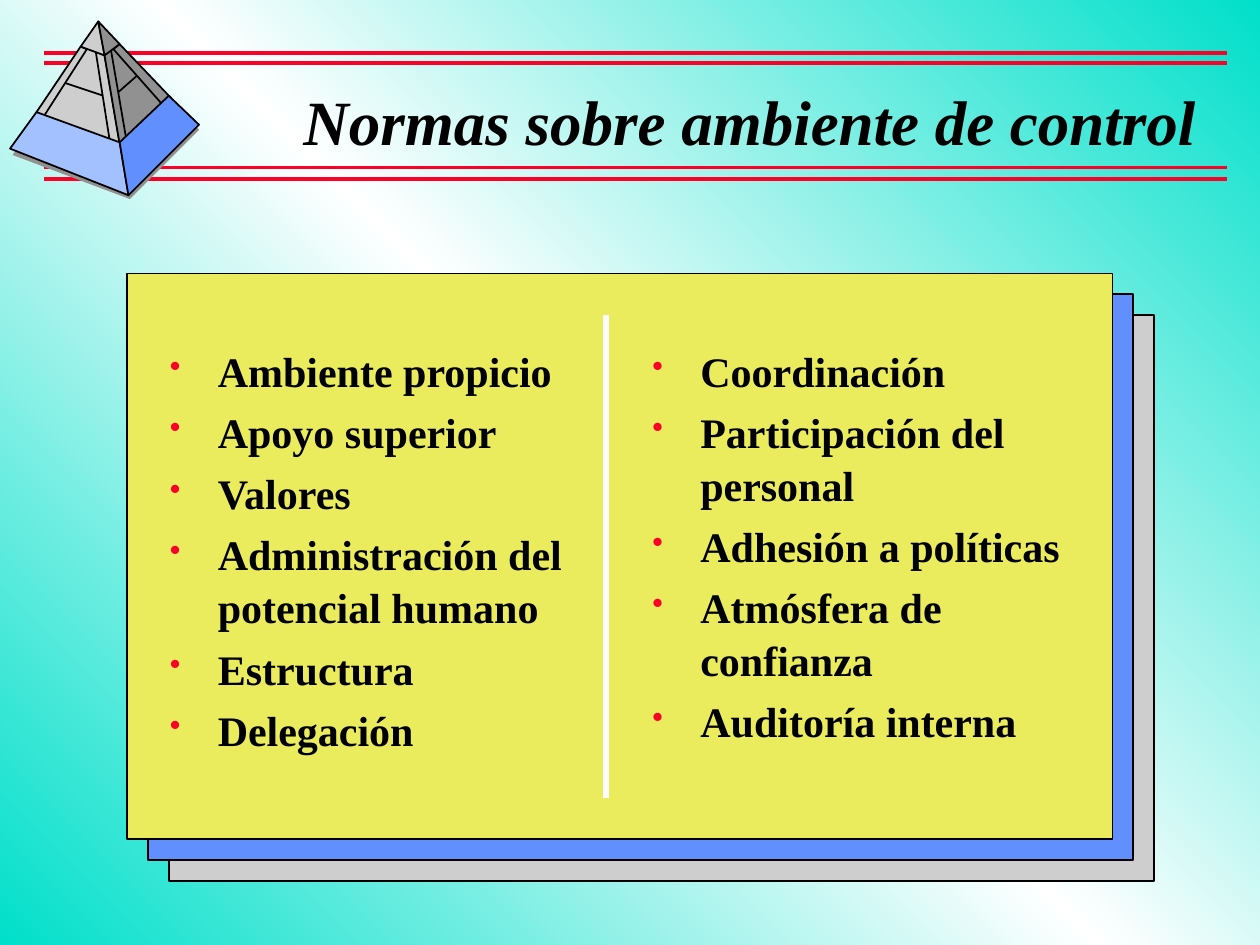
from lxml.etree import SubElement
from pptx import Presentation
from pptx.dml.color import RGBColor
from pptx.enum.shapes import MSO_CONNECTOR, MSO_SHAPE
from pptx.enum.text import MSO_ANCHOR, PP_ALIGN
from pptx.oxml import parse_xml
from pptx.oxml.ns import nsdecls, qn
from pptx.util import Inches, Pt

FONT = "Times New Roman"
RED, BLACK, WHITE, TEAL = "FC0128", "000000", "FFFFFF", "00DFCA"
LIGHT, DARK, BLUE, PALE_BLUE, YELLOW = "CECECE", "919191", "618FFD", "A2C1FE", "EAEC5E"

RULE_LEFT, RULE_RIGHT = 0.35, 9.74
RULE_ROWS = (0.42, 0.5, 1.33, 1.42)
CARD_LEFT, CARD_TOP, CARD_WIDTH, CARD_HEIGHT, CARD_STEP = 1.01, 2.17, 7.82, 4.49, 0.165
LIST_TOP, LIST_HEIGHT, INDENT = 2.67, 3.5, 0.38

LEFT_ITEMS = ["Ambiente propicio", "Apoyo superior", "Valores",
              "Administración del potencial humano", "Estructura", "Delegación"]
RIGHT_ITEMS = ["Coordinación", "Participación del personal", "Adhesión a políticas",
               "Atmósfera de confianza", "Auditoría interna"]

# Each face: fill, then corner points in inches, from back to front
PYRAMID_FACES = [
    (DARK, [(0.92, 0.76), (0.98, 1.14), (1.33, 0.81), (1.1, 0.55), (0.9, 0.7)]),
    (DARK, [(0.93, 0.74), (1.1, 0.59), (0.87, 0.31), (0.9, 0.76)]),
    (LIGHT, [(0.51, 0.63), (0.85, 0.74), (0.92, 1.14), (0.3, 0.92)]),
    (LIGHT, [(0.75, 0.3), (0.49, 0.65), (0.85, 0.77)]),
    (LIGHT, [(0.69, 0.39), (0.35, 0.92), (0.29, 0.89), (0.64, 0.37)]),
    (DARK, [(0.95, 0.35), (1.36, 0.78), (1.29, 0.83), (0.9, 0.39)]),
    (LIGHT, [(0.76, 0.41), (0.83, 0.44), (0.95, 1.14), (0.87, 1.11)]),
    (DARK, [(0.83, 0.44), (0.88, 0.39), (1, 1.09), (0.95, 1.14)]),
    (PALE_BLUE, [(0.29, 0.89), (0.95, 1.13), (1.02, 1.55), (0.08, 1.18)]),
    (LIGHT, [(0.83, 0.44), (0.78, 0.17), (0.64, 0.37)]),
    (DARK, [(0.83, 0.44), (0.95, 0.35), (0.78, 0.17)]),
    (BLUE, [(1.34, 0.76), (0.95, 1.13), (1.02, 1.55), (1.58, 0.99)]),
]
PYRAMID_SHADOW = [(0.79, 0.2), (0.1, 1.23), (1.03, 1.58), (1.58, 1.03)]


def color(hex_code):
    return RGBColor.from_string(hex_code)


def set_background(slide, colors, angle):
    """Fill the slide with evenly spaced gradient stops."""
    fill = slide.background.fill
    fill.solid()
    stops = "".join(
        f'<a:gs pos="{i * 100000 // (len(colors) - 1)}"><a:srgbClr val="{c}"/></a:gs>'
        for i, c in enumerate(colors))
    gradient = parse_xml(
        f'<a:gradFill {nsdecls("a")} rotWithShape="0"><a:gsLst>{stops}</a:gsLst>'
        f'<a:lin ang="{angle * 60000}" scaled="0"/></a:gradFill>')
    solid = slide.background._cSld.find(".//" + qn("a:solidFill"))
    solid.getparent().replace(solid, gradient)


def style_shape(sp, fill, outline=BLACK):
    sp.shadow.inherit = False
    sp.fill.solid()
    sp.fill.fore_color.rgb = color(fill)
    if outline:
        sp.line.color.rgb = color(outline)
        sp.line.width = Pt(1)
    else:
        sp.line.fill.background()


def add_line(shapes, start, end, line_color, width):
    line = shapes.add_connector(MSO_CONNECTOR.STRAIGHT,
                                *(Inches(v) for v in (*start, *end)))
    line.line.color.rgb = color(line_color)
    line.line.width = Pt(width)
    SubElement(line._element.spPr, qn("a:effectLst"))


def add_polygon(shapes, points, fill, outline=BLACK):
    corners = [(Inches(x), Inches(y)) for x, y in points]
    builder = shapes.build_freeform(*corners[0])
    builder.add_line_segments(corners[1:], close=True)
    style_shape(builder.convert_to_shape(), fill, outline)


def add_bullet(p):
    pPr = p._p.get_or_add_pPr()
    pPr.set("marL", str(Inches(INDENT)))
    pPr.set("indent", str(-Inches(INDENT)))
    bullet_color = SubElement(pPr, qn("a:buClr"))
    SubElement(bullet_color, qn("a:srgbClr"), val=RED)
    SubElement(pPr, qn("a:buSzPct"), val="75000")
    SubElement(pPr, qn("a:buChar"), char="•")


def add_text(shapes, box, paragraphs, size, italic=False, bullets=False,
             align=PP_ALIGN.LEFT, anchor=MSO_ANCHOR.TOP, before=0, spacing=None):
    tf = shapes.add_textbox(*(Inches(v) for v in box)).text_frame
    tf.word_wrap = True
    tf.vertical_anchor = anchor
    for i, text in enumerate(paragraphs):
        p = tf.add_paragraph() if i else tf.paragraphs[0]
        p.alignment = align
        p.space_before = Pt(before)
        p.line_spacing = spacing
        if bullets:
            add_bullet(p)
        r = p.add_run()
        r.text = text
        r.font.name = FONT
        r.font.size = Pt(size)
        r.font.bold = True
        r.font.italic = italic
        r.font.color.rgb = color(BLACK)


def add_pyramid(shapes):
    group = shapes.add_group_shape().shapes
    add_polygon(group, PYRAMID_SHADOW, DARK, outline=None)
    for fill, points in PYRAMID_FACES:
        add_polygon(group, points, fill)


def add_cards(shapes):
    """Stack the cards, each one step up and left of the one behind."""
    for step, fill in zip((2, 1, 0), (LIGHT, BLUE, YELLOW)):
        offset = step * CARD_STEP
        box = (CARD_LEFT + offset, CARD_TOP + offset, CARD_WIDTH, CARD_HEIGHT)
        sp = shapes.add_shape(MSO_SHAPE.RECTANGLE, *(Inches(v) for v in box))
        style_shape(sp, fill)


def main():
    prs = Presentation()
    prs.slide_width, prs.slide_height = Inches(10), Inches(7.5)
    slide = prs.slides.add_slide(prs.slide_layouts[6])
    shapes = slide.shapes
    set_background(slide, (TEAL, WHITE, TEAL), 315)

    add_text(shapes, (0.42, 0.33, 9.17, 1.25), ["Normas sobre ambiente de control"], 36,
             italic=True, align=PP_ALIGN.RIGHT, anchor=MSO_ANCHOR.MIDDLE)
    rules = shapes.add_group_shape().shapes
    for y in RULE_ROWS:
        add_line(rules, (RULE_LEFT, y), (RULE_RIGHT, y), RED, 2)
    add_pyramid(shapes)

    add_cards(shapes)
    for left, width, items in ((1.25, 3.42, LEFT_ITEMS), (5.08, 3.58, RIGHT_ITEMS)):
        add_text(shapes, (left, LIST_TOP, width, LIST_HEIGHT), items, 24,
                 bullets=True, before=4.8, spacing=1.05)
    add_line(shapes, (4.81, 2.5), (4.81, 6.33), WHITE, 3)
    prs.save("out.pptx")


if __name__ == "__main__":
    main()
